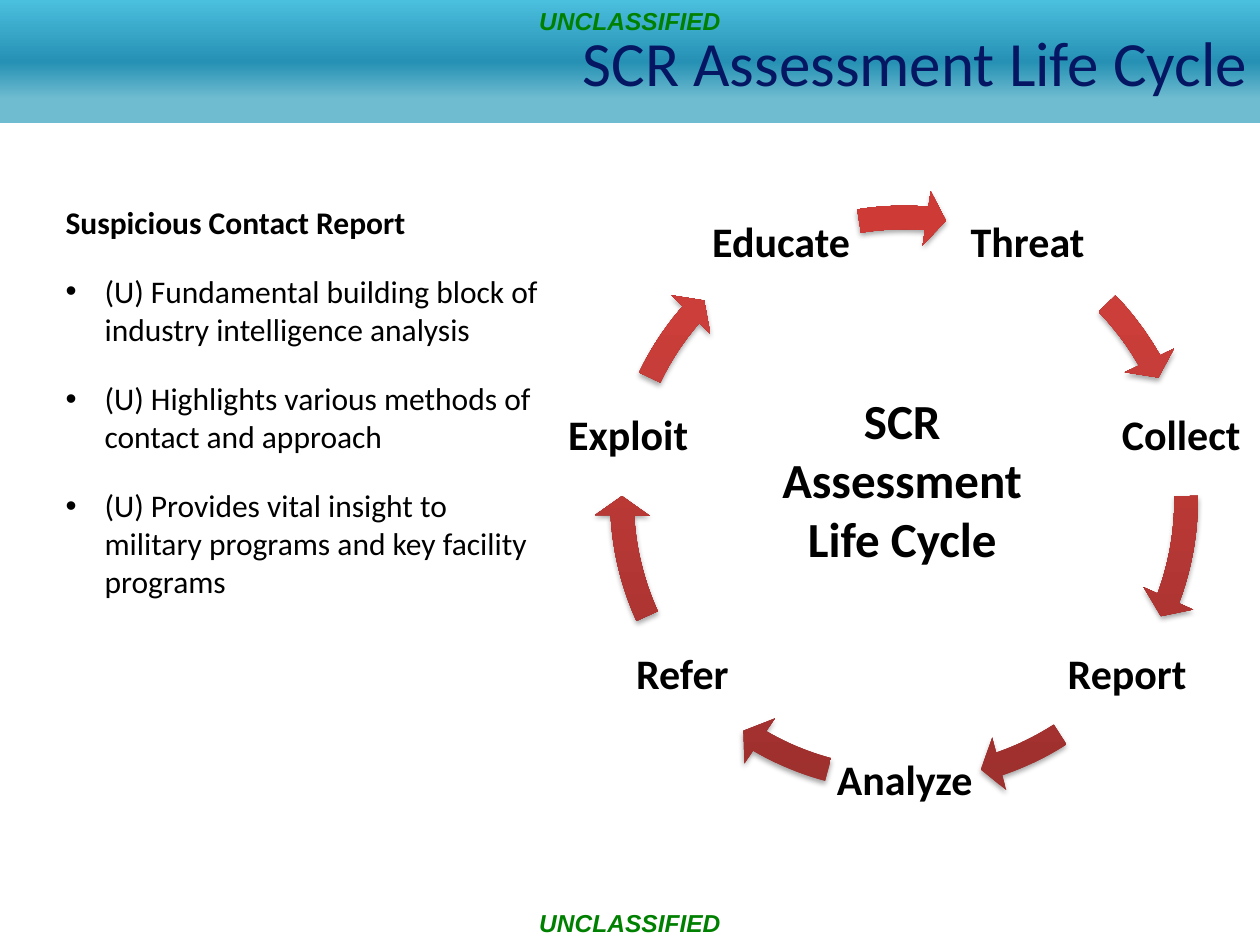
from collections import namedtuple
from dataclasses import dataclass

from lxml import etree
from pptx import Presentation
from pptx.dml.color import RGBColor
from pptx.enum.shapes import MSO_SHAPE
from pptx.enum.text import MSO_ANCHOR, MSO_AUTO_SIZE, PP_ALIGN
from pptx.oxml.ns import qn
from pptx.util import Inches, Pt

RECTANGLE, CIRCULAR_ARROW = MSO_SHAPE.RECTANGLE, MSO_SHAPE.CIRCULAR_ARROW
TOP, MIDDLE = MSO_ANCHOR.TOP, MSO_ANCHOR.MIDDLE
CENTER, RIGHT, LEFT = PP_ALIGN.CENTER, PP_ALIGN.RIGHT, PP_ALIGN.LEFT
GROW = MSO_AUTO_SIZE.SHAPE_TO_FIT_TEXT

Box = namedtuple("Box", "left top width height")
Stage = namedtuple("Stage", "label left top width start tip ring_left ring_top")


@dataclass(frozen=True)
class Theme:
    """Colours, fonts and type sizes of the slide."""
    font: str = "Calibri"
    marking_font: str = "Arial"
    title: str = "051763"
    text: str = "000000"
    marking: str = "008000"
    band: tuple = ((15, "6FBCD0"), (20, "6FBCD0"), (50, "2691B4"), (100, "4BBFDE"))
    arrow: tuple = ((0, "9C2F2D"), (80, "CB3E3A"), (100, "CE3B37"))
    title_size: int = 36
    hub_size: int = 28
    stage_size: int = 24
    body_size: int = 18
    marking_size: int = 14


THEME = Theme()
RING_SIZE = 4.91
LABEL_HEIGHT = 0.95
STAGES = [
    Stage("Threat", 3.11, 0, 1.29, 316.01, 330.45, 0.32, 0.05),
    Stage("Collect", 4.36, 1.53, 1.23, 359.29, 20.5, 0.32, 0.05),
    Stage("Report", 3.87, 3.43, 1.35, 57.31, 71.08, 0.35, 0.03),
    Stage("Analyze", 2.17, 4.27, 1.22, 105.07, 120.17, 0.3, 0.03),
    Stage("Refer", 0.54, 3.43, 0.95, 155.59, 176.79, 0.32, 0.05),
    Stage("Exploit", 0, 1.53, 1.17, 205.64, 220.97, 0.32, 0.05),
    Stage("Educate", 1.18, 0, 1.24, 260.84, 274.61, 0.32, 0.05),
]
POINTS = [
    "(U) Fundamental building block of industry intelligence analysis",
    "(U) Highlights various methods of contact and approach",
    "(U) Provides vital insight to military programs and key facility programs",
]


def emu(box):
    """Return the box as four lengths."""
    return [Inches(side) for side in box]


def place(shape, box):
    """Move a placeholder to the box."""
    shape.left, shape.top, shape.width, shape.height = emu(box)


def style(paragraph, size, color=THEME.text, font=THEME.font, bold=False, align=CENTER):
    """Set alignment and font of a paragraph."""
    paragraph.alignment = align
    paragraph.font.name = font
    paragraph.font.size = Pt(size)
    paragraph.font.bold = bold
    paragraph.font.color.rgb = RGBColor.from_string(color)


def add_gradient_shape(slide, kind, box, stops):
    """Add an unlined shape whose gradient runs from bottom to top."""
    shape = slide.shapes.add_shape(kind, *emu(box))
    shape.shadow.inherit = False
    shape.line.fill.background()
    shape.fill.gradient()
    shape.fill.gradient_angle = 90
    stop_list = shape._element.spPr.find(qn("a:gradFill")).find(qn("a:gsLst"))
    for stop in list(stop_list):
        stop_list.remove(stop)
    for position, color in stops:
        stop = etree.SubElement(stop_list, qn("a:gs"), pos=str(position * 1000))
        etree.SubElement(stop, qn("a:srgbClr"), val=color)
    return shape


def add_soft_shadow(shape):
    """Give the shape a faint shadow straight below."""
    effects = shape._element.spPr.find(qn("a:effectLst"))
    shadow = etree.SubElement(
        effects, qn("a:outerShdw"), blurRad=str(Pt(3.1)), dist=str(Pt(1.8)),
        dir="5400000", rotWithShape="0")
    color = etree.SubElement(shadow, qn("a:srgbClr"), val="000000")
    etree.SubElement(color, qn("a:alpha"), val="35000")


def add_header(slide, box):
    """Place the title on its gradient band."""
    band = add_gradient_shape(slide, RECTANGLE, box, THEME.band)
    slide.shapes._spTree.insert(2, band._element)
    title = slide.shapes.title
    place(title, box)
    title.text_frame.text = "SCR Assessment Life Cycle"
    title.text_frame.vertical_anchor = MIDDLE
    style(title.text_frame.paragraphs[0], THEME.title_size, THEME.title, align=RIGHT)


def add_stage(slide, cycle, stage):
    """Add one stage label and the arrow that leaves it."""
    label = slide.shapes.add_textbox(*emu(Box(
        cycle.left + stage.left, cycle.top + stage.top, stage.width, LABEL_HEIGHT)))
    frame = label.text_frame
    frame.word_wrap = True
    frame.vertical_anchor = MIDDLE
    frame.margin_left = frame.margin_right = Inches(0.03)
    frame.margin_top = frame.margin_bottom = Inches(0.03)
    frame.text = stage.label
    frame.paragraphs[0].line_spacing = 0.9
    style(frame.paragraphs[0], THEME.stage_size, bold=True)

    ring = Box(cycle.left + stage.ring_left, cycle.top + stage.ring_top,
               RING_SIZE, RING_SIZE)
    arrow = add_gradient_shape(slide, CIRCULAR_ARROW, ring, THEME.arrow)
    arrow.adjustments[0] = 0.038
    for index, degrees in enumerate((3.92, stage.tip, stage.start), 1):
        arrow.adjustments[index] = degrees * 0.6
    arrow.adjustments[4] = 0.044
    add_soft_shadow(arrow)


def add_cycle(slide, box):
    """Draw the ring of stages around its central name."""
    for stage in STAGES:
        add_stage(slide, box, stage)
    hub = slide.shapes.add_textbox(
        *emu(Box(box.left + 1.7, box.top + 1.59, 2.12, 1.51)))
    frame = hub.text_frame
    frame.word_wrap = False
    frame.auto_size = GROW
    frame.text = "SCR\nAssessment\nLife Cycle"
    for paragraph in frame.paragraphs:
        style(paragraph, THEME.hub_size, bold=True)


def add_marking(slide, box):
    """Add a classification marking."""
    frame = slide.shapes.add_textbox(*emu(box)).text_frame
    frame.word_wrap = True
    frame.auto_size = GROW
    frame.text = "UNCLASSIFIED"
    style(frame.paragraphs[0], THEME.marking_size, THEME.marking,
          THEME.marking_font, bold=True)
    frame.paragraphs[0].font.italic = True


def add_report_points(slide, box):
    """Fill the body placeholder with a heading and its bullets."""
    body = slide.placeholders[1]
    place(body, box)
    frame = body.text_frame
    frame.auto_size = GROW
    frame.vertical_anchor = TOP
    frame.text = "\n".join(["Suspicious Contact Report", *POINTS])
    for index, paragraph in enumerate(frame.paragraphs):
        is_heading = index == 0
        indent = 0 if is_heading else Inches(0.31)
        properties = paragraph._p.get_or_add_pPr()
        properties.set("marL", str(indent))
        properties.set("indent", str(-indent))
        if is_heading:
            etree.SubElement(properties, qn("a:buNone"))
        else:
            etree.SubElement(properties, qn("a:buFont"), typeface="Arial")
            etree.SubElement(properties, qn("a:buChar"), char="•")
        paragraph.space_before = Pt(0)
        paragraph.space_after = Pt(18)
        style(paragraph, THEME.body_size, bold=is_heading, align=LEFT)


def main():
    """Build and save the slide."""
    deck = Presentation()
    deck.slide_width, deck.slide_height = Inches(10), Inches(7.5)
    slide = deck.slides.add_slide(deck.slide_layouts[1])
    add_header(slide, Box(0, 0, 10, 0.98))
    add_cycle(slide, Box(4.4, 1.46, 5.59, 5.22))
    for top in (0, 7.16):
        add_marking(slide, Box(0, top, 10, 0.33))
    add_report_points(slide, Box(0.42, 1.56, 4.05, 3.28))
    deck.save("out.pptx")


if __name__ == "__main__":
    main()
